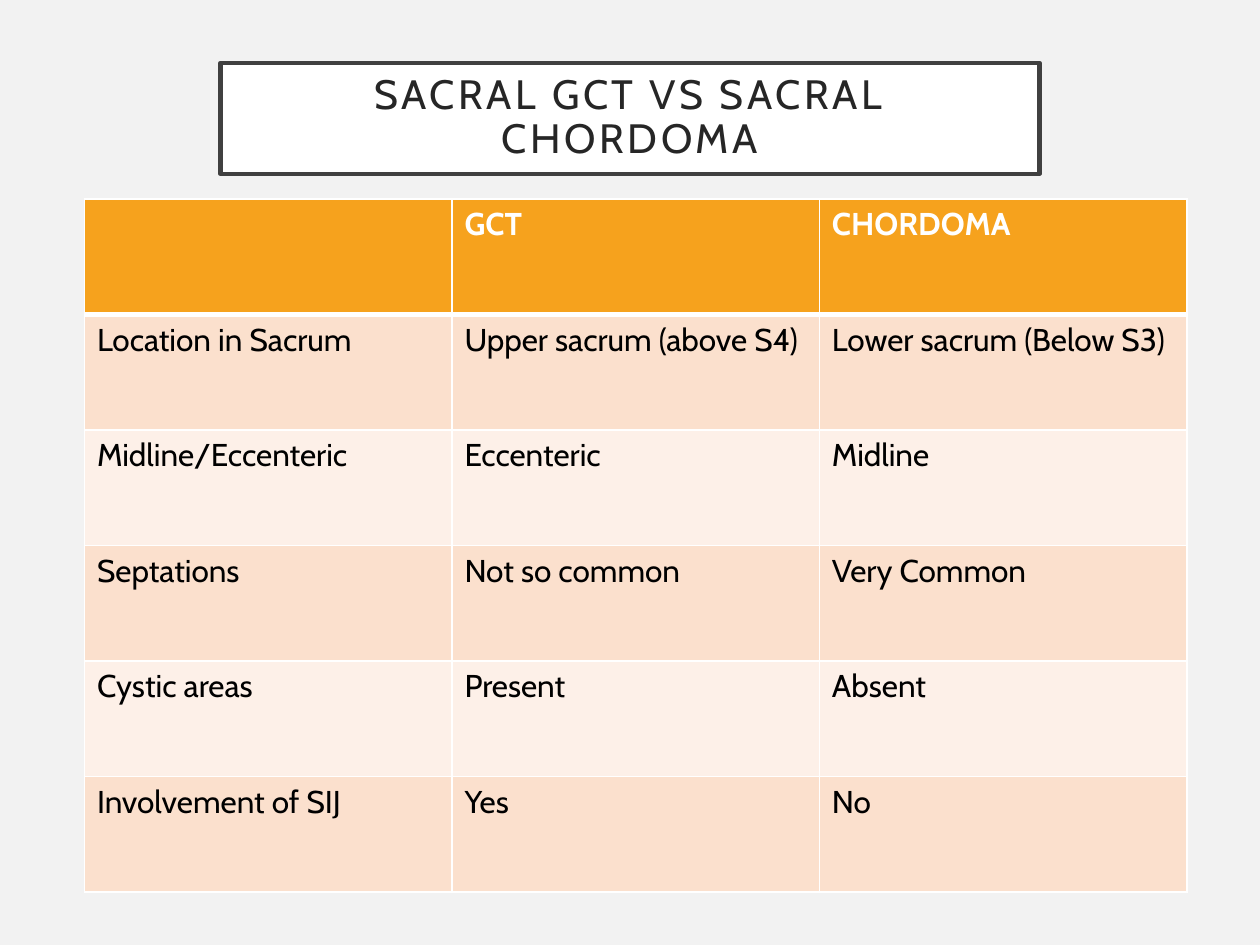
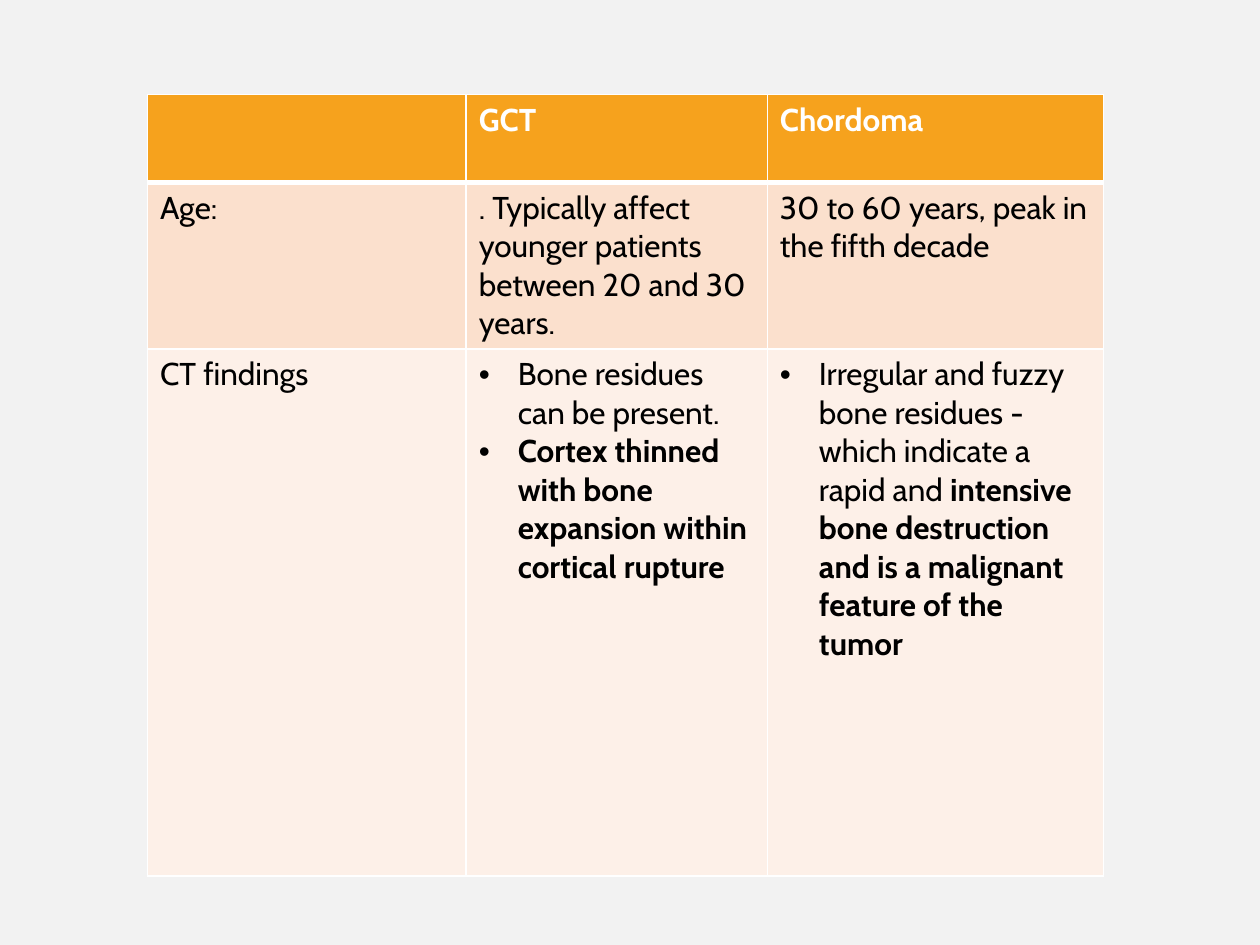
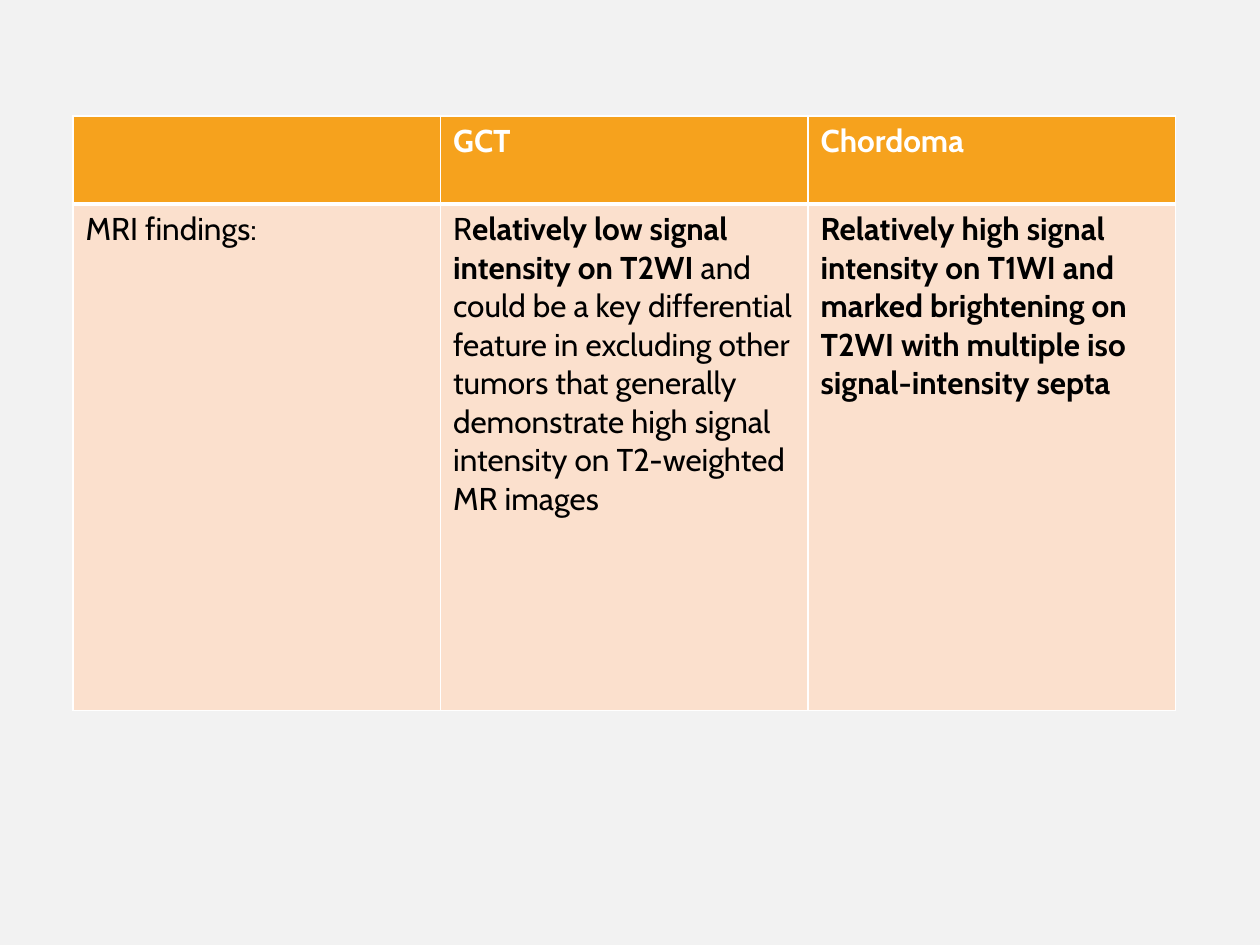
from lxml.etree import SubElement
from pptx import Presentation
from pptx.dml.color import RGBColor
from pptx.enum.shapes import MSO_SHAPE as Shape
from pptx.enum.text import MSO_ANCHOR as Anchor, PP_ALIGN as Align
from pptx.oxml.ns import qn
from pptx.util import Inches, Pt

FONT = "Cabin"
COLORS = {
    "page": "F2F2F2", "header": "F6A21D", "odd_row": "FBE0CD", "even_row": "FDF0E8",
    "white": "FFFFFF", "black": "000000", "title": "262626", "frame": "404040",
}
TEXT_SIZE, TITLE_SIZE = 18, 23.4
THIN_RULE, HEADER_RULE = 1, 3
BULLET_INDENT = 0.31
THIRDS = [8.75 / 3] * 3

# Content: *asterisks* mark bold text, a list is a bulleted cell
SLIDES = [
    {
        "title": "SACRAL GCT VS SACRAL CHORDOMA",
        "corner": (0.67, 1.58), "columns": THIRDS, "heights": [5.5 / 6] * 6,
        "rows": [
            ("", "*GCT*", "*CHORDOMA*"),
            ("Location in Sacrum", "Upper sacrum (above S4)", "Lower sacrum (Below S3)"),
            ("Midline/Eccenteric", "Eccenteric", "Midline"),
            ("Septations", "Not so common", "Very Common"),
            ("Cystic areas", "Present", "Absent"),
            ("Involvement of SIJ", "Yes", "No"),
        ],
    },
    {
        "corner": (1.17, 0.75), "columns": [2.53, 2.39, 2.67], "heights": [0.7, 1.32, 4.18],
        "rows": [
            ("", "*GCT*", "*Chordoma*"),
            ("Age:", ". Typically affect younger patients between 20 and 30 years.",
             "30 to 60 years, peak in the fifth decade"),
            ("CT findings",
             ["Bone residues can be present.",
              "*Cortex thinned with bone expansion within cortical rupture*"],
             ["Irregular and fuzzy bone residues - which indicate a rapid and "
              "*intensive bone destruction and is a malignant feature of the tumor*"]),
        ],
    },
    {
        "corner": (0.58, 0.92), "columns": THIRDS, "heights": [0.7, 4.02],
        "rows": [
            ("", "*GCT*", "*Chordoma*"),
            ("MRI findings:",
             "R*elatively low signal intensity on T2WI* and could be a key differential "
             "feature in excluding other tumors that generally demonstrate high signal "
             "intensity on T2-weighted MR images",
             "*Relatively high signal intensity on T1WI and marked brightening on T2WI "
             "with multiple iso signal-intensity septa*"),
        ],
    },
]


def color(name):
    return RGBColor.from_string(COLORS[name])


def paint(fill, name):
    fill.solid()
    fill.fore_color.rgb = color(name)


def set_font(para, size, color_name):
    para.font.name = FONT
    para.font.size = Pt(size)
    para.font.color.rgb = color(color_name)


def add_title(page, text):
    box = page.shapes.add_shape(
        Shape.RECTANGLE, Inches(1.75), Inches(0.5), Inches(6.5), Inches(0.88))
    box.shadow.inherit = False
    paint(box.fill, "white")
    box.line.color.rgb = color("frame")
    box.line.width = Pt(2.5)
    frame = box.text_frame
    frame.word_wrap = True
    frame.vertical_anchor = Anchor.MIDDLE
    frame.margin_left = frame.margin_right = Inches(0.2)
    frame.margin_top = frame.margin_bottom = Inches(0.2)
    para = frame.paragraphs[0]
    para.alignment = Align.CENTER
    para.line_spacing = 0.9
    set_font(para, TITLE_SIZE, "title")
    span = para.add_run()
    span.text = text
    span.font._element.set("spc", "200")


def add_border(cell, side, width):
    line = SubElement(cell._tc.get_or_add_tcPr(), qn(f"a:ln{side}"), w=str(Pt(width)))
    SubElement(SubElement(line, qn("a:solidFill")), qn("a:srgbClr"), val=COLORS["white"])


def add_bullet(para):
    props = para._p.get_or_add_pPr()
    props.set("marL", str(Inches(BULLET_INDENT)))
    props.set("indent", str(-Inches(BULLET_INDENT)))
    SubElement(props, qn("a:buFont"), typeface="Arial")
    SubElement(props, qn("a:buChar"), char="•")


def fill_cell(cell, content, row):
    # Borders: a heavier rule separates the header from the body
    for side in "LRTB":
        heavy = (row, side) in ((0, "B"), (1, "T"))
        add_border(cell, side, HEADER_RULE if heavy else THIN_RULE)
    paint(cell.fill, "header" if row == 0 else "odd_row" if row % 2 else "even_row")

    # Text
    bulleted = isinstance(content, list)
    frame = cell.text_frame
    for index, text in enumerate(content if bulleted else [content]):
        para = frame.add_paragraph() if index else frame.paragraphs[0]
        if bulleted:
            add_bullet(para)
        set_font(para, TEXT_SIZE, "black" if row else "white")
        for part, piece in enumerate(text.split("*")):
            if piece:
                span = para.add_run()
                span.text = piece
                span.font.bold = part % 2 == 1


def add_comparison(page, corner, columns, heights, rows):
    left, top = corner
    table = page.shapes.add_table(
        len(rows), len(columns), Inches(left), Inches(top),
        Inches(sum(columns)), Inches(sum(heights))).table
    for column, width in zip(table.columns, columns):
        column.width = Inches(width)
    for row, (height, contents) in enumerate(zip(heights, rows)):
        table.rows[row].height = Inches(height)
        for column, content in enumerate(contents):
            fill_cell(table.cell(row, column), content, row)


def main():
    deck = Presentation()
    deck.slide_width, deck.slide_height = Inches(10), Inches(7.5)
    for content in SLIDES:
        page = deck.slides.add_slide(deck.slide_layouts[6])
        paint(page.background.fill, "page")
        add_comparison(page, content["corner"], content["columns"],
                       content["heights"], content["rows"])
        if "title" in content:
            add_title(page, content["title"])
    deck.save("out.pptx")


if __name__ == "__main__":
    main()
